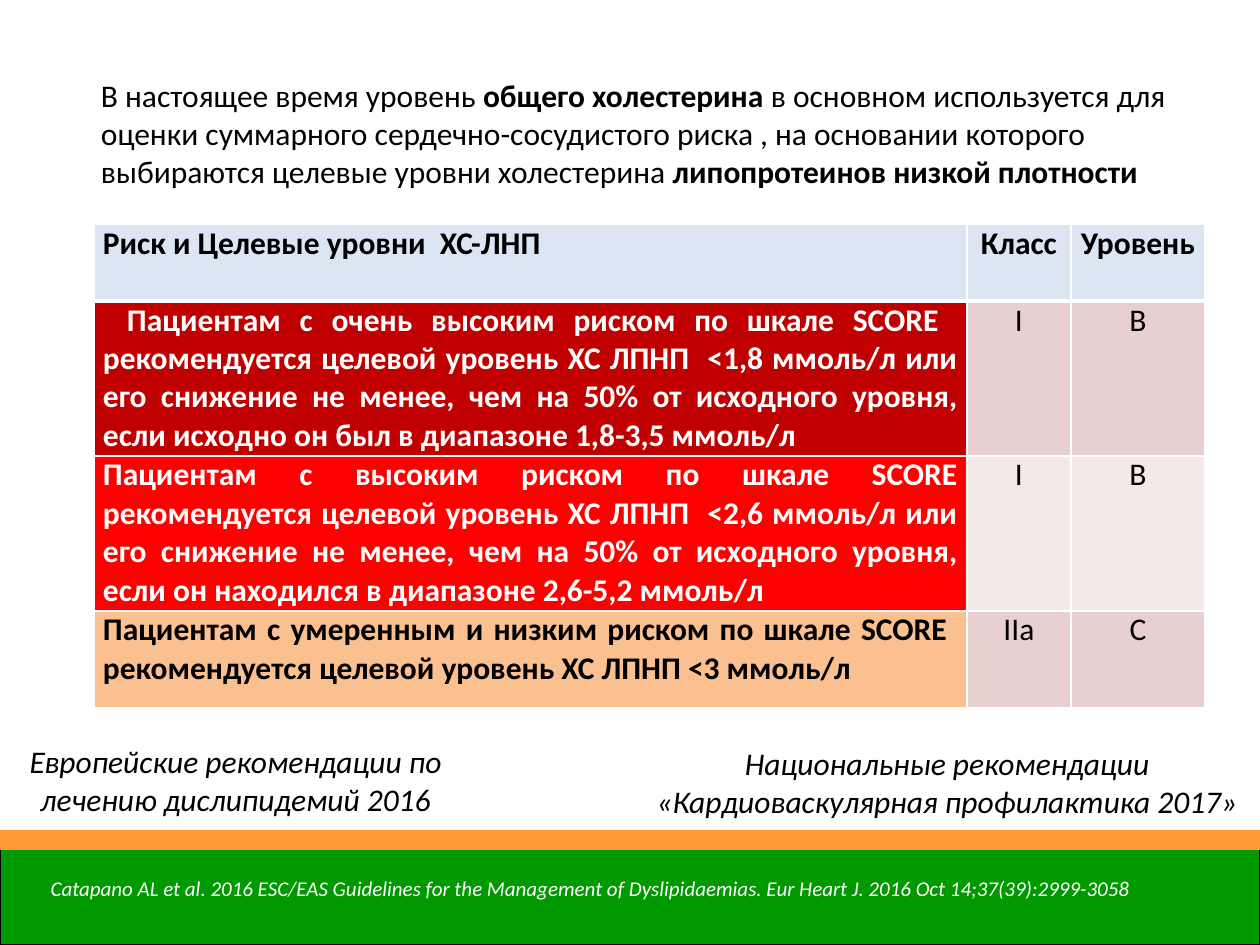
from dataclasses import dataclass

from lxml.etree import SubElement
from pptx import Presentation
from pptx.dml.color import RGBColor
from pptx.enum.shapes import MSO_SHAPE
from pptx.enum.text import MSO_ANCHOR, PP_ALIGN
from pptx.oxml.ns import qn
from pptx.util import Emu, Pt


@dataclass(frozen=True)
class Theme:
    font: str = "Calibri"
    body: int = 18
    source: int = 12
    black: str = "000000"
    white: str = "FFFFFF"
    green: str = "009900"
    orange: str = "FF9933"
    header: str = "DCE6F2"
    very_high: str = "C00000"
    high: str = "FF0000"
    moderate: str = "FAC090"
    band_dark: str = "E8D0D0"
    band_light: str = "F4E9E9"


T = Theme()


def px(n):
    return Emu(round(n * 914400 / 126))


def rgb(value):
    return RGBColor.from_string(value)


def write(p, text, size=T.body, color=T.black, bold=False, italic=False,
          align=PP_ALIGN.LEFT, indent=0):
    p.alignment = align
    if indent:
        pPr = p._p.get_or_add_pPr()
        pPr.set("marL", "0")
        pPr.set("indent", str(px(indent)))
    r = p.add_run()
    r.text = text
    r.font.name, r.font.size = T.font, Pt(size)
    r.font.bold, r.font.italic = bold, italic
    r.font.color.rgb = rgb(color)


class SlideBuilder:
    """Draws styled elements on one slide, with lengths in px."""

    def __init__(self, slide):
        self.s = slide

    def rect(self, x, y, w, h, fill, line=None):
        sp = self.s.shapes.add_shape(MSO_SHAPE.RECTANGLE, px(x), px(y), px(w), px(h))
        sp.shadow.inherit = False
        sp.fill.solid()
        sp.fill.fore_color.rgb = rgb(fill)
        if line:
            sp.line.color.rgb = rgb(line)
            sp.line.width = Pt(0.75)
        else:
            sp.line.fill.background()

    def text(self, x, y, w, h, paragraphs, anchor=MSO_ANCHOR.MIDDLE, wrap=True,
             left=13, top=6, **fmt):
        tf = self.s.shapes.add_textbox(px(x), px(y), px(w), px(h)).text_frame
        tf.word_wrap, tf.vertical_anchor = wrap, anchor
        tf.margin_left, tf.margin_top = px(left), px(top)
        for i, runs in enumerate(paragraphs):
            p = tf.add_paragraph() if i else tf.paragraphs[0]
            for text, bold in runs:
                write(p, text, bold=bold, **fmt)

    def border(self, cell, side, width):
        ln = SubElement(cell._tc.get_or_add_tcPr(), qn(f"a:ln{side}"), w=str(Pt(width)))
        fill = SubElement(ln, qn("a:solidFill"))
        SubElement(fill, qn("a:srgbClr"), val=T.white)

    def cell(self, cell, text, fill, top=1, bottom=1, **fmt):
        cell.margin_left = cell.margin_right = px(9)
        cell.margin_top = cell.margin_bottom = 0
        for side, width in zip("LRTB", (1, 1, top, bottom)):
            self.border(cell, side, width)
        cell.fill.solid()
        cell.fill.fore_color.rgb = rgb(fill)
        write(cell.text_frame.paragraphs[0], text, **fmt)

    def table(self, x, y, cols, heights, rows):
        table = self.s.shapes.add_table(
            len(rows), len(cols), px(x), px(y), px(sum(cols)), px(sum(heights))).table
        table.first_row = table.horz_banding = False
        for col, w in zip(table.columns, cols):
            col.width = px(w)
        for i, (texts, fill, band, color, indent) in enumerate(rows):
            table.rows[i].height = px(heights[i])
            for j, text in enumerate(texts):
                first = j == 0
                self.cell(
                    table.cell(i, j), text, fill if first else band,
                    top=3 if i == 1 else 1, bottom=3 if i == 0 else 1,
                    color=color if first else T.black, bold=first or i == 0,
                    align=PP_ALIGN.JUSTIFY if first else PP_ALIGN.CENTER,
                    indent=indent if first else 0)


INTRO = [
    ("В настоящее время уровень ", False),
    ("общего холестерина ", True),
    ("в основном используется для оценки суммарного сердечно-сосудистого риска , "
     "на основании которого выбираются целевые уровни холестерина ", False),
    ("липопротеинов низкой плотности", True),
]
ROWS = [
    (("Риск и Целевые уровни  ХС-ЛНП", "Класс", "Уровень"),
     T.header, T.header, T.black, 0),
    (("Пациентам с очень высоким риском по шкале SCORE  рекомендуется целевой уровень "
      "ХС ЛПНП  <1,8 ммоль/л или его снижение не менее, чем на 50% от исходного уровня, "
      "если исходно он был в диапазоне 1,8-3,5 ммоль/л", "I", "В"),
     T.very_high, T.band_dark, T.white, 24),
    (("Пациентам с высоким риском по шкале SCORE рекомендуется целевой уровень "
      "ХС ЛПНП  <2,6 ммоль/л или его снижение не менее, чем на 50% от исходного уровня, "
      "если он находился в диапазоне 2,6-5,2 ммоль/л", "I", "В"),
     T.high, T.band_light, T.white, 0),
    (("Пациентам с умеренным и низким риском по шкале SCORE  рекомендуется целевой "
      "уровень ХС ЛПНП <3 ммоль/л", "IIа", "С"),
     T.moderate, T.band_dark, T.black, 0),
]
SOURCE = ("Catapano AL et al. 2016 ESC/EAS Guidelines for the Management of "
          "Dyslipidaemias. Eur Heart J. 2016 Oct 14;37(39):2999-3058")
EUROPEAN = "Европейские рекомендации по лечению дислипидемий 2016"
NATIONAL = ("Национальные рекомендации", "«Кардиоваскулярная профилактика 2017»")


def main():
    prs = Presentation()
    prs.slide_width, prs.slide_height = px(1260), px(945)
    b = SlideBuilder(prs.slides.add_slide(prs.slide_layouts[6]))
    caption = {"italic": True, "align": PP_ALIGN.CENTER}

    b.rect(0, 849, 1260, 96, T.green, line=T.black)
    b.text(39, 31, 1187, 165, [INTRO], anchor=MSO_ANCHOR.BOTTOM, left=62)
    b.text(0, 859, 1181, 59, [[(SOURCE, False)]], wrap=False,
           size=T.source, color=T.white, **caption)
    b.rect(0, 830, 1260, 20, T.orange)
    b.table(94, 224, (873, 104, 134), (77, 155, 155, 97), ROWS)
    b.text(15, 736, 441, 89, [[(EUROPEAN, False)]], anchor=MSO_ANCHOR.TOP, **caption)
    b.text(637, 721, 620, 118, [[(line, False)] for line in NATIONAL],
           wrap=False, top=10, **caption)
    prs.save("out.pptx")


if __name__ == "__main__":
    main()
